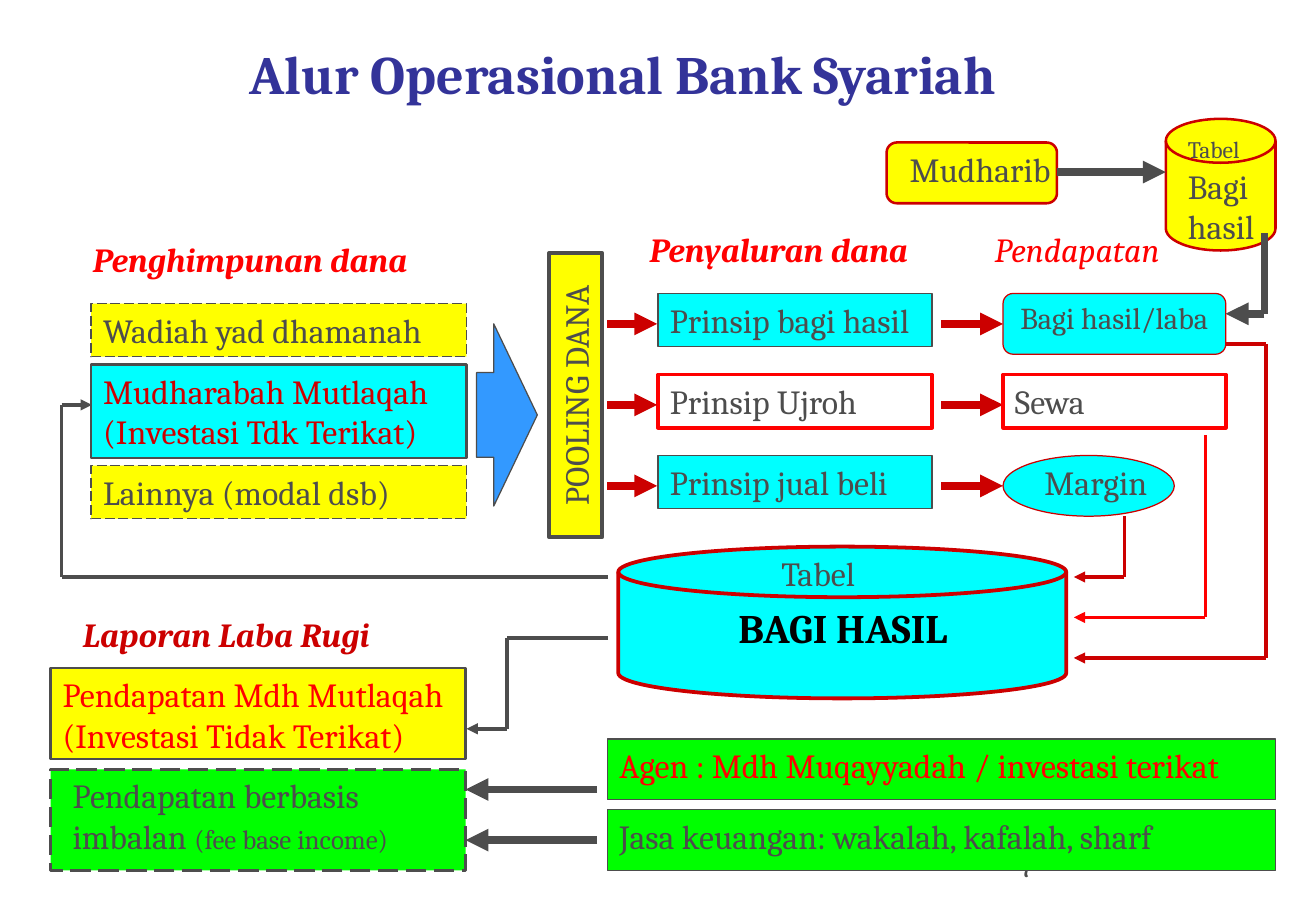
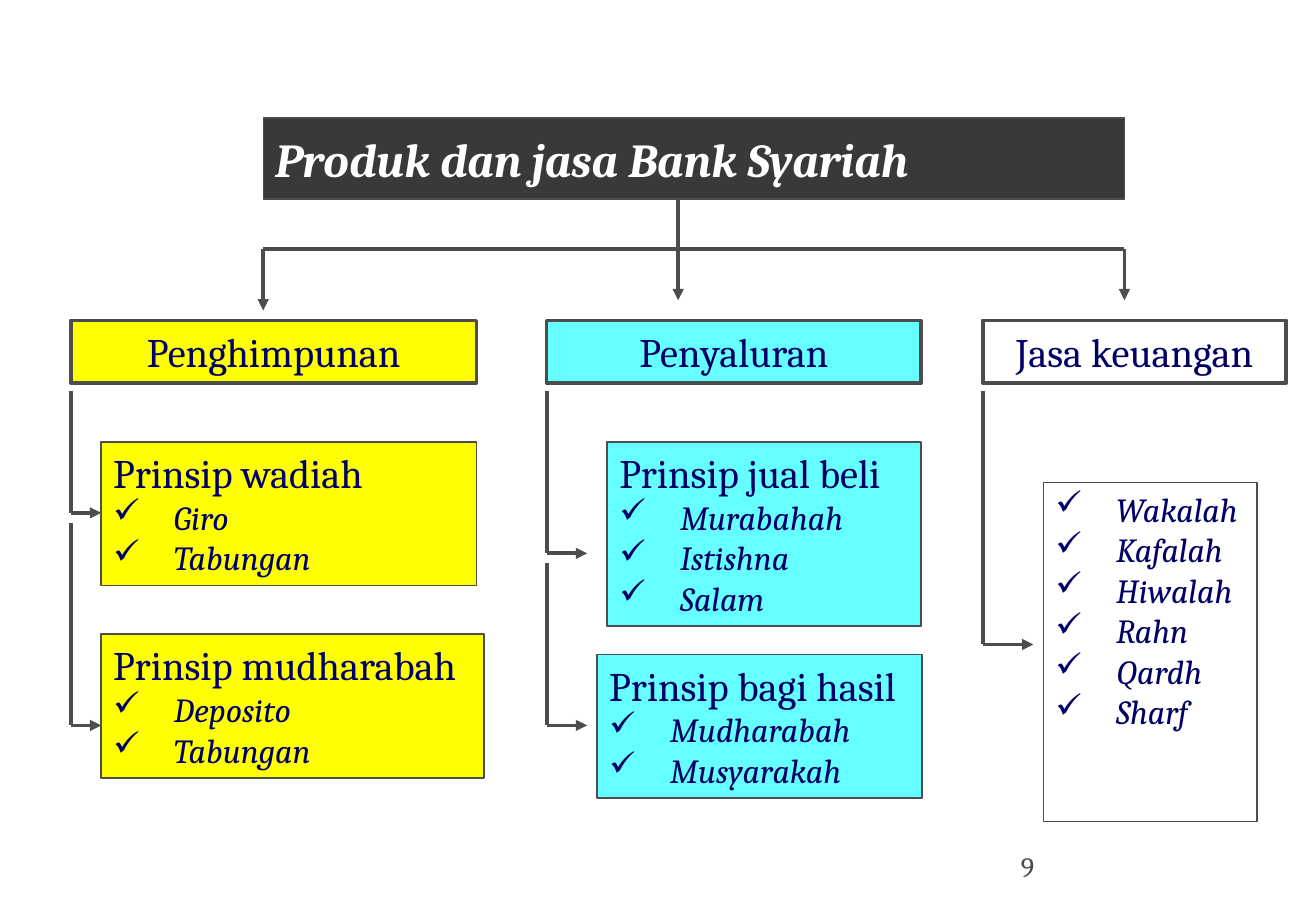
from dataclasses import dataclass
from typing import Any

from lxml.etree import SubElement as Sub
from pptx import Presentation
from pptx.dml.color import RGBColor as RGB
from pptx.enum.dml import MSO_LINE as Dash
from pptx.enum.shapes import MSO_CONNECTOR as Link, MSO_SHAPE as Kind
from pptx.enum.text import MSO_ANCHOR as Anchor, PP_ALIGN as Align
from pptx.oxml.ns import qn
from pptx.util import Pt


@dataclass(frozen=True)
class Theme:
    """Colours, font and type sizes shared by the slides."""
    font: str = "Cambria"
    ink: str = "4D4D4D"
    black: str = "000000"
    white: str = "FFFFFF"
    red: str = "FF0000"
    deep: str = "CC0000"
    yellow: str = "FFFF00"
    cyan: str = "00FFFF"
    pale: str = "66FFFF"
    green: str = "00FF00"
    blue: str = "3399FF"
    indigo: str = "333399"
    navy: str = "000066"
    dark: str = "393939"
    title: float = 32
    band: float = 28
    head: float = 24
    body: float = 20
    mid: float = 18
    note: float = 16
    page: float = 16.6
    tiny: float = 14
    thin: float = 0.75
    rule: float = 1.5
    wire: float = 2.25
    thick: float = 4.5


T = Theme()


def add(par, text, size=T.body, color=T.ink, bold=False, ital=False):
    """Add one styled run to a paragraph."""
    run = par.add_run()
    run.text = text
    font = run.font
    font.name, font.size = T.font, Pt(size)
    font.bold, font.italic = bold, ital
    font.color.rgb = RGB.from_string(color)


def tick(par):
    """Give a paragraph a hanging check mark."""
    props = par._p.get_or_add_pPr()
    props.set("marL", str(Pt(36)))
    props.set("indent", str(-Pt(36)))
    Sub(props, qn("a:buChar")).set("char", "✓")


def say(shape, text, align=Align.LEFT, anchor=Anchor.TOP, **style):
    """Write each line of text as a paragraph and return the last one."""
    frame = shape.text_frame
    frame.word_wrap = True
    frame.vertical_anchor = anchor
    for i, line in enumerate(text.split("\n")):
        par = frame.paragraphs[0] if i == 0 else frame.add_paragraph()
        par.alignment = align
        add(par, line, **style)
    return par


@dataclass
class Area:
    """A region of a slide whose parts are placed from its corner."""
    slide: Any
    x: float
    y: float
    w: float
    h: float

    def box(self, x, y, w, h, fill=None, line=T.ink, width=T.thin, kind=Kind.RECTANGLE, dash=False):
        """Draw a preset shape."""
        shape = self.slide.shapes.add_shape(kind, Pt(self.x + x), Pt(self.y + y), Pt(w), Pt(h))
        shape.shadow.inherit = False
        if fill:
            shape.fill.solid()
            shape.fill.fore_color.rgb = RGB.from_string(fill)
        else:
            shape.fill.background()
        shape.line.color.rgb = RGB.from_string(line)
        shape.line.width = Pt(width)
        if dash:
            shape.line.dash_style = Dash.LONG_DASH
        return shape

    def label(self, x, y, w, h, text, **style):
        """Place a text box and return its last paragraph."""
        shape = self.slide.shapes.add_textbox(Pt(self.x + x), Pt(self.y + y), Pt(w), Pt(h))
        return say(shape, text, **style)

    def wire(self, *points, color=T.ink, width=T.wire, tip=True):
        """Join points with straight lines, the last one with an arrowhead."""
        for (a, b), (c, d) in zip(points, points[1:]):
            line = self.slide.shapes.add_connector(
                Link.STRAIGHT, Pt(self.x + a), Pt(self.y + b), Pt(self.x + c), Pt(self.y + d))
            line.line.color.rgb = RGB.from_string(color)
            line.line.width = Pt(width)
            Sub(line._element.spPr, qn("a:effectLst"))
        if tip:
            Sub(line.line._get_or_add_ln(), qn("a:tailEnd")).set("type", "triangle")


def start(deck, page):
    """Add a blank slide with its page number."""
    slide = deck.slides.add_slide(deck.slide_layouts[6])
    Area(slide, 598, 500, 182, 29).label(0, 0, 182, 29, page, size=T.page)
    return slide


def funds(area):
    """Draw the sources of funds and the arrow to the pool."""
    area.label(-6, 0, 215, 32, "Penghimpunan dana", color=T.red, bold=True, ital=True)
    for y, text in ((42, "Wadiah yad dhamanah"), (138, "Lainnya (modal dsb)")):
        say(area.box(0, y, area.w, 31.5, T.yellow, dash=True), text)
    say(area.box(0, 78, area.w, 55.5, T.cyan, width=T.rule),
        "Mudharabah Mutlaqah\n(Investasi Tdk Terikat)", color=T.deep)
    arrow = area.box(area.w + 6, 54, 36, 108, T.blue, kind=Kind.RIGHT_ARROW)
    arrow.adjustments[0], arrow.adjustments[1] = 0.465, 0.717


def pool(area):
    """Draw the upright bar of pooled funds."""
    wide, high = area.h, area.w
    bar = area.box((high - wide) / 2, (wide - high) / 2, wide, high, T.yellow, width=T.wire)
    bar.rotation = 270
    say(bar, "POOLING DANA", Align.CENTER)


def uses(area):
    """Draw the three uses of funds with the income of each."""
    area.label(18, -42, 185, 32, "Penyaluran dana", color=T.red, bold=True, ital=True)
    area.label(222.5, -42, 130, 32, "Pendapatan", color=T.red, ital=True)
    gain = 234.5
    cyan = dict(fill=T.cyan)
    open_ = dict(line=T.red, width=T.wire)
    rows = (("Prinsip bagi hasil", cyan), ("Prinsip Ujroh", open_), ("Prinsip jual beli", cyan))
    for i, (text, look) in enumerate(rows):
        y = i * 48
        say(area.box(30, y, 162.5, 31.5, **look), text)
        for a, b in ((0, 29.5), (198, gain)):
            area.wire((a, y + 18), (b, y + 18), color=T.deep, width=T.thick)
    area.box(gain, 0, 132, 36, T.cyan, T.deep, kind=Kind.FLOWCHART_ALTERNATE_PROCESS)
    area.label(gain, 0, 132, 29, "Bagi hasil/laba", align=Align.CENTER, size=T.mid)
    say(area.box(gain, 48, 132, 31.5, **open_), "Sewa")
    area.box(gain, 96, 101.5, 36, T.cyan, T.deep, kind=Kind.OVAL)
    area.label(gain + 17.5, 96, 80, 32, "Margin")


def agent(area):
    """Draw the managing partner, its table and the link to income."""
    area.box(0, 14, 101, 36, T.yellow, T.deep, T.rule, Kind.FLOWCHART_ALTERNATE_PROCESS)
    area.label(6.5, 14, 104, 32, "Mudharib")
    area.box(165.5, 0, 65, 78, T.yellow, T.deep, T.rule, Kind.FLOWCHART_MAGNETIC_DISK)
    par = area.label(171.5, 0, 59, 80, "Tabel", size=T.tiny)
    add(par, " Bagi hasil")
    area.wire((101, 31.5), (165.5, 31.5), width=T.thick)
    area.wire((224, 67.5), (224, 115.5), (201, 115.5), width=T.thick)


def share(area):
    """Draw the profit table with the links into and out of it."""
    area.box(0, 0, area.w, area.h, T.cyan, T.deep, T.wire, Kind.FLOWCHART_MAGNETIC_DISK)
    area.label(89.5, 0, 70, 32, "Tabel")
    area.label(12, 30, 242, 47, "BAGI HASIL", align=Align.CENTER,
               size=T.head, color=T.black, bold=True)
    end = area.w + 4.5
    links = ((360, -120, 66, T.deep), (300, -18, 18, T.deep), (348, -66, 42, T.red))
    for x, top, y, color in links:
        lead = ((360, -120),) if x == 360 else ()
        turn = 384 if lead else x
        area.wire(*lead, (turn, top), (turn, y), (end, y), color=color)
    area.wire((-6, 18), (-330, 18), (-330, -84), (-312, -84))
    area.wire((-6, 54), (-66, 54), (-66, 108), (-90, 108))


def report(area):
    """Draw the profit and loss report."""
    area.label(12, -36, 200, 32, "Laporan Laba Rugi", color=T.deep, bold=True, ital=True)
    say(area.box(0, 0, area.w, 54, T.yellow, width=T.rule),
        "Pendapatan Mdh Mutlaqah\n(Investasi Tidak Terikat)", color=T.red)
    area.box(0, 60, area.w, 60, T.green, width=T.rule, dash=True)
    par = area.label(6, 60, 222, 55.5, "Pendapatan berbasis imbalan ")
    add(par, "(fee base income)", T.note)


def fees(area):
    """Draw the fee services with arrows to the report."""
    rows = (("Agen : Mdh Muqayyadah / investasi terikat", T.red, 30),
            ("Jasa keuangan: wakalah, kafalah, sharf", T.ink, 60))
    for i, (text, color, y) in enumerate(rows):
        say(area.box(0, i * 42, area.w, 36, T.green), text, color=color)
        area.wire((-6, y), (-84, y), width=T.thick)


def flow(deck):
    """Build the slide on the flow of operations."""
    slide = start(deck, "7")
    Area(slide, 33, 24, 672.5, 38).label(
        0, 0, 672.5, 38, "Alur Operasional Bank Syariah", align=Align.CENTER,
        anchor=Anchor.MIDDLE, size=T.title, color=T.indigo, bold=True)
    funds(Area(slide, 54, 138, 222.5, 170))
    pool(Area(slide, 325.5, 150, 31.5, 168.5))
    uses(Area(slide, 360, 174, 366.5, 132))
    agent(Area(slide, 525.5, 70.5, 230.5, 116))
    share(Area(slide, 366.5, 324, 265.5, 90))
    report(Area(slide, 30, 396, 246, 120))
    fees(Area(slide, 360, 438, 396, 78))


def crown(area):
    """Draw the title band and its branches to the columns."""
    say(area.box(0, 0, area.w, area.h, T.dark), "Produk dan jasa Bank Syariah",
        anchor=Anchor.MIDDLE, size=T.band, color=T.white, bold=True, ital=True)
    bar = area.h + 29.5
    area.wire((0, bar), (area.w, bar), tip=False)
    for x, top, end in ((0, bar, 114), (246, area.h, 108), (area.w, bar, 108)):
        area.wire((x, top), (x, end))


def column(area, text, fill, tip, cards):
    """Draw a heading with its cards hung from elbow arrows."""
    say(area.box(0, 0, area.w, area.h, fill, width=T.wire), text,
        Align.CENTER, size=T.head, color=T.navy)
    top = area.h + 5
    for place, end, head, items in cards:
        frame = area.box(*place, fill, width=1)
        par = say(frame, head, size=T.head, color=T.navy) if head else None
        for item in items.split():
            par = frame.text_frame.add_paragraph() if par else frame.text_frame.paragraphs[0]
            par.alignment = Align.LEFT
            tick(par)
            add(par, item, color=T.navy, ital=True)
        frame.text_frame.vertical_anchor = Anchor.TOP
        frame.text_frame.word_wrap = True
        area.wire((0, top), (0, end), (tip, end))
        top = end + 6


def goods(deck):
    """Build the slide on products and services."""
    slide = start(deck, "9")
    crown(Area(slide, 156, 70, 510.5, 48))
    y, h = 190, 37
    column(Area(slide, 42, y, 240.5, h), "Penghimpunan", T.yellow, 18, (
        ((18, 72, 222.5, 85), 114, "Prinsip wadiah", "Giro Tabungan"),
        ((18, 186, 227, 85), 240, "Prinsip mudharabah", "Deposito Tabungan")))
    column(Area(slide, 324, y, 222, h), "Penyaluran", T.pale, 24, (
        ((36, 72, 186, 109), 138, "Prinsip jual beli", "Murabahah Istishna Salam"),
        ((30, 198, 192.5, 85), 240, "Prinsip bagi hasil", "Mudharabah Musyarakah")))
    column(Area(slide, 582.5, y, 180, h), "Jasa keuangan", T.white, 30, (
        ((36, 96, 126.5, 201), 192, "", "Wakalah Kafalah Hiwalah Rahn Qardh Sharf"),))


def main():
    """Build and save the deck."""
    deck = Presentation()
    deck.slide_width, deck.slide_height = Pt(780), Pt(540)
    flow(deck)
    goods(deck)
    deck.save("out.pptx")


if __name__ == "__main__":
    main()
